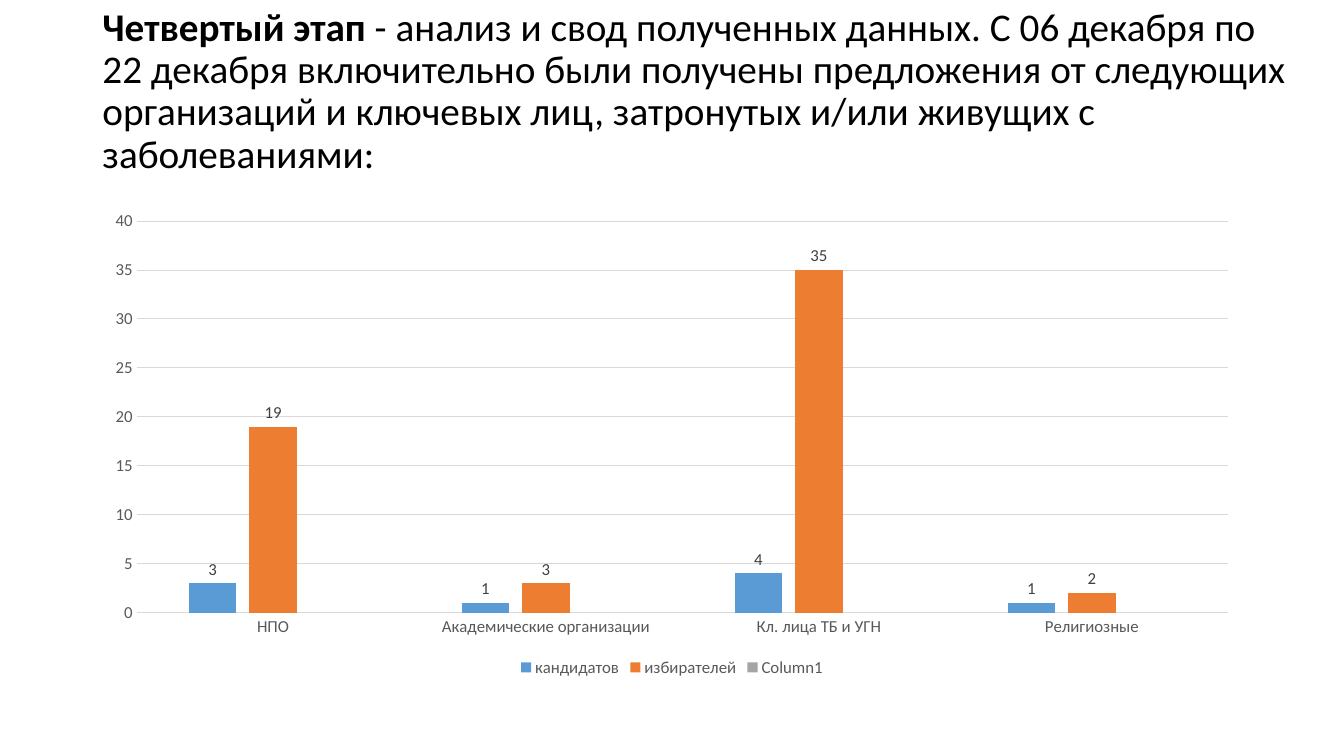
from pptx import Presentation
from pptx.chart.data import CategoryChartData
from pptx.dml.color import RGBColor
from pptx.enum.chart import XL_CHART_TYPE as ChartType
from pptx.enum.chart import XL_LABEL_POSITION as LabelPos
from pptx.enum.chart import XL_LEGEND_POSITION as LegendPos
from pptx.enum.chart import XL_TICK_MARK as Tick
from pptx.enum.text import MSO_ANCHOR as Anchor
from pptx.enum.text import MSO_AUTO_SIZE as AutoSize
from pptx.enum.text import PP_ALIGN as Align
from pptx.util import Pt

FONT = "Calibri"
BLACK = RGBColor(0x00, 0x00, 0x00)
DARK_GRAY = RGBColor(0x40, 0x40, 0x40)
GRAY = RGBColor(0x59, 0x59, 0x59)
LIGHT_GRAY = RGBColor(0xD9, 0xD9, 0xD9)
BLUE = RGBColor(0x5B, 0x9B, 0xD5)
ORANGE = RGBColor(0xED, 0x7D, 0x31)
SILVER = RGBColor(0xA5, 0xA5, 0xA5)

STAGE = "Четвертый этап"
SUMMARY = (
    " - анализ и свод полученных данных. С 06 декабря по 22 декабря включительно "
    "были получены предложения от следующих организаций и ключевых лиц, "
    "затронутых и/или живущих с заболеваниями:"
)
GROUPS = ["НПО", "Академические организации", "Кл. лица ТБ и УГН", "Религиозные"]
SERIES = [
    ("кандидатов", (3, 1, 4, 1), BLUE),
    ("избирателей", (19, 3, 35, 2), ORANGE),
    ("Column1", (None,) * len(GROUPS), SILVER),
]


def set_font(font, size=12, color=GRAY, bold=False):
    font.name = FONT
    font.size = Pt(size)
    font.bold = bold
    font.color.rgb = color


def add_text(p, text, **fmt):
    r = p.add_run()
    r.text = text
    set_font(r.font, **fmt)


def set_line(line):
    line.color.rgb = LIGHT_GRAY
    line.width = Pt(0.75)


def fill_title(sp):
    sp.left, sp.top, sp.width, sp.height = Pt(66), Pt(28.8), Pt(869), Pt(104.4)
    tf = sp.text_frame
    tf.word_wrap = True
    tf.auto_size = AutoSize.NONE
    tf.vertical_anchor = Anchor.MIDDLE
    tf.margin_bottom = Pt(34.4)
    p = tf.paragraphs[0]
    p.alignment = Align.LEFT
    p.line_spacing = 0.9
    add_text(p, STAGE, size=28, color=BLACK, bold=True)
    add_text(p, SUMMARY, size=28, color=BLACK)


def format_axis(axis):
    axis.major_tick_mark = axis.minor_tick_mark = Tick.NONE
    set_font(axis.tick_labels.font)


def add_labels(series):
    labels = series.data_labels
    labels.show_value = True
    labels.position = LabelPos.OUTSIDE_END
    set_font(labels.font, color=DARK_GRAY)


def add_column_chart(s):
    data = CategoryChartData()
    data.categories = GROUPS
    for name, values, _ in SERIES:
        data.add_series(name, values)
    chart = s.shapes.add_chart(
        ChartType.COLUMN_CLUSTERED, Pt(66), Pt(144), Pt(828), Pt(342.7), data
    ).chart
    set_font(chart.font, size=10, color=BLACK)
    chart.has_title = False
    chart.has_legend = True
    chart.legend.position = LegendPos.BOTTOM
    chart.legend.include_in_layout = False
    set_font(chart.legend.font)

    format_axis(chart.category_axis)
    set_line(chart.category_axis.format.line)
    format_axis(chart.value_axis)
    chart.value_axis.format.line.fill.background()
    set_line(chart.value_axis.major_gridlines.format.line)

    plot = chart.plots[0]
    plot.gap_width = 219
    plot.overlap = -27
    plot.vary_by_categories = False
    for series, (_, values, color) in zip(plot.series, SERIES):
        series.format.fill.solid()
        series.format.fill.fore_color.rgb = color
        if any(values):
            add_labels(series)


def main():
    prs = Presentation()
    prs.slide_width, prs.slide_height = Pt(960), Pt(540)
    s = prs.slides.add_slide(prs.slide_layouts.get_by_name("Title Only"))
    fill_title(s.shapes.title)
    add_column_chart(s)
    prs.save("out.pptx")


if __name__ == "__main__":
    main()
